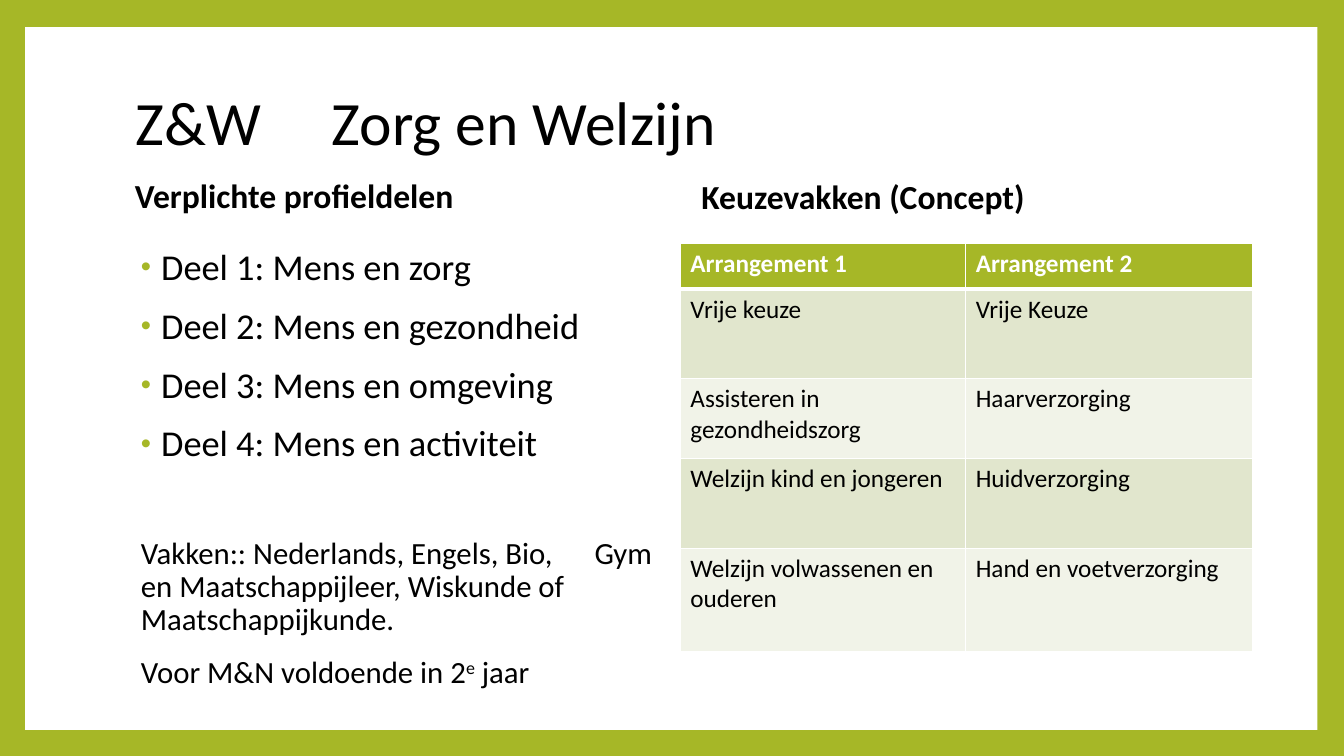
from lxml.etree import SubElement as Sub
from pptx import Presentation
from pptx.dml.color import RGBColor
from pptx.enum.shapes import MSO_SHAPE as Shape
from pptx.enum.text import MSO_ANCHOR as Anchor
from pptx.oxml.ns import qn
from pptx.util import Pt

GREEN, WHITE, BLACK = "A6B727", "FFFFFF", "000000"


def paint(fill, color):
    fill.solid()
    fill.fore_color.rgb = RGBColor.from_string(color)


def write(para, text, size, color=BLACK, bold=False):
    run = para.add_run()
    run.text = text
    run.font.name = "Calibri"
    run.font.size = Pt(size)
    run.font.bold = bold
    paint(run.font.fill, color)
    return run


deck = Presentation()
deck.slide_width, deck.slide_height = Pt(960), Pt(540)
slide = deck.slides.add_slide(deck.slide_layouts[6])

# Green frame around a white panel
paint(slide.background.fill, GREEN)
panel = slide.shapes.add_shape(Shape.RECTANGLE, Pt(18), Pt(19.4), Pt(923), Pt(502))
panel.shadow.inherit = False
paint(panel.fill, WHITE)
panel.line.fill.background()

# Title and the two headings
heads = [
    ("Z&W\tZorg en Welzijn", 90, 48.2, 778, 83, 44, False),
    ("Verplichte profieldelen", 89.3, 84.2, 374.4, 114.5, 24, True),
    ("Keuzevakken (Concept)", 493.9, 64.1, 374.4, 154.8, 24, True),
]
for text, left, top, width, height, size, bold in heads:
    frame = slide.shapes.add_textbox(Pt(left), Pt(top), Pt(width), Pt(height)).text_frame
    frame.word_wrap = True
    frame.vertical_anchor = Anchor.MIDDLE
    para = frame.paragraphs[0]
    para.line_spacing = 0.9
    if "\t" in text:
        tabs = Sub(para._p.get_or_add_pPr(), qn("a:tabLst"))
        Sub(tabs, qn("a:tab"), pos=str(Pt(140)), algn="l")
    write(para, text, size, bold=bold)

# Left column: bulleted parts, then plain notes
body = slide.shapes.add_textbox(Pt(90), Pt(174.2), Pt(384), Pt(346)).text_frame
body.word_wrap = True
parts = ["zorg", "gezondheid", "omgeving", "activiteit"]
for i, part in enumerate(parts, 1):
    para = body.paragraphs[0] if i == 1 else body.add_paragraph()
    para.line_spacing = 0.9
    para.space_before = Pt(14)
    props = para._p.get_or_add_pPr()
    props.set("marL", str(Pt(18)))
    props.set("indent", str(Pt(-14.4)))
    Sub(Sub(props, qn("a:buClr")), qn("a:srgbClr"), val=GREEN)
    Sub(props, qn("a:buSzPct"), val="80000")
    Sub(props, qn("a:buFont"), typeface="Arial")
    Sub(props, qn("a:buChar"), char="•")
    write(para, f"Deel {i}: Mens en {part}", 26)

subjects = ("Vakken:: Nederlands, Engels, Bio,\tGym en Maatschappijleer, "
            "Wiskunde of Maatschappijkunde.")
notes = [([subjects], 52), (["Voor M&N voldoende in 2", "e", " jaar"], 14)]
for texts, gap in notes:
    para = body.add_paragraph()
    para.line_spacing = 0.9
    para.space_before = Pt(gap)
    props = para._p.get_or_add_pPr()
    props.set("marL", str(Pt(3.6)))
    props.set("indent", "0")
    if "\t" in texts[0]:
        tabs = Sub(props, qn("a:tabLst"))
        Sub(tabs, qn("a:tab"), pos=str(Pt(324)), algn="l")
    for text in texts:
        run = write(para, text, 22)
        if text == "e":
            run.font._element.set("baseline", "30000")

# Table of electives
rows = [
    ("Arrangement 1", "Arrangement 2"),
    ("Vrije keuze", "Vrije Keuze"),
    ("Assisteren in gezondheidszorg", "Haarverzorging"),
    ("Welzijn kind en jongeren", "Huidverzorging"),
    ("Welzijn volwassenen en ouderen", "Hand en voetverzorging"),
]
table = slide.shapes.add_table(5, 2, Pt(486), Pt(174.2), Pt(409), Pt(291)).table
for col, width in zip(table.columns, (203.8, 205.2)):
    col.width = Pt(width)
for row, height in zip(table.rows, (32.4, 64, 57, 64, 74)):
    row.height = Pt(height)
for r, row in enumerate(rows):
    shade = GREEN if r == 0 else ("F1F3E8", "E1E6CD")[r % 2]
    for c, text in enumerate(row):
        cell = table.cell(r, c)
        props = cell._tc.get_or_add_tcPr()
        for side in "LRTB":
            thick = (r == 0 and side == "B") or (r == 1 and side == "T")
            line = Sub(props, qn(f"a:ln{side}"), w=str(Pt(3 if thick else 1)))
            Sub(Sub(line, qn("a:solidFill")), qn("a:srgbClr"), val=WHITE)
        paint(cell.fill, shade)
        write(cell.text_frame.paragraphs[0], text, 18,
              WHITE if r == 0 else BLACK, r == 0)

deck.save("out.pptx")
